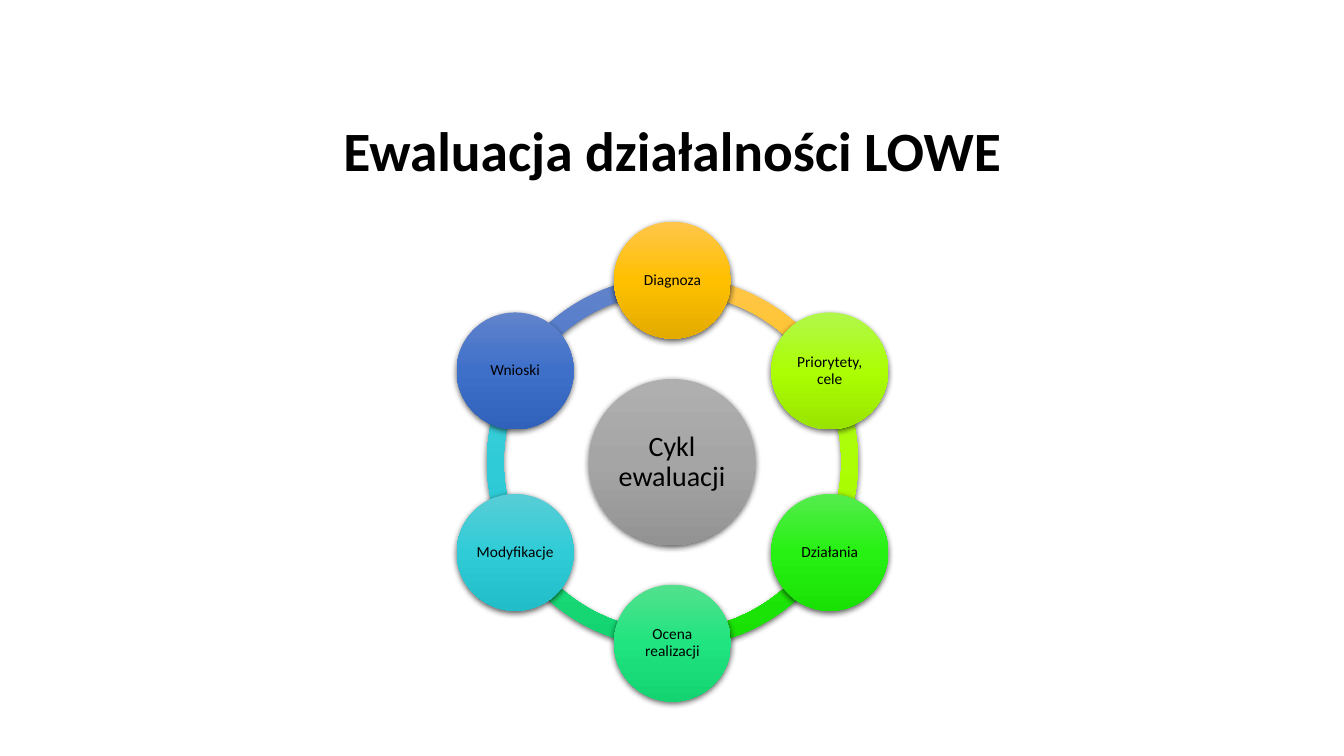
import math
from dataclasses import dataclass

from lxml import etree
from pptx import Presentation
from pptx import util as u
from pptx.dml.color import RGBColor
from pptx.enum import shapes, text
from pptx.oxml.ns import qn

PX = 9144  # EMU per px, 100 px to the inch


@dataclass(frozen=True)
class Theme:
    font: str = "Calibri"
    ink: str = "000000"
    title_size: float = 39.6
    hub_size: int = 20
    stage_size: int = 11
    grey: tuple = ("AFAFAF", "A5A5A5", "939393")
    gold: tuple = ("FFC64B", "FFC000", "E3AB00")
    lime: tuple = ("B1F74C", "ABFE03", "99E400")
    green: tuple = ("55EC4E", "26F112", "19E104")
    mint: tuple = ("53E18E", "20E47F", "13D471")
    teal: tuple = ("59CDD6", "2FCCD7", "21BDC8")
    blue: tuple = ("6183CB", "3E70CA", "3062BB")


THEME = Theme()

# Stages run clockwise from the top
STAGES = [
    ("Diagnoza", THEME.gold),
    ("Priorytety, cele", THEME.lime),
    ("Działania", THEME.green),
    ("Ocena realizacji", THEME.mint),
    ("Modyfikacje", THEME.teal),
    ("Wnioski", THEME.blue),
]
STEP = 360 // len(STAGES)
TOP = 270  # degrees, clockwise from the right
CENTRE = (667, 458)
ORBIT = 180
RING, HUB, STAGE = 368, 165, 116  # diameters


def write(frame, wording, size, bold=False, inset=2):
    """Centre one paragraph in a text frame."""
    frame.word_wrap = True
    frame.auto_size = text.MSO_AUTO_SIZE.NONE
    frame.vertical_anchor = text.MSO_ANCHOR.MIDDLE
    frame.margin_left = frame.margin_right = inset * PX
    frame.margin_top = frame.margin_bottom = inset * PX
    paragraph = frame.paragraphs[0]
    paragraph.alignment = text.PP_ALIGN.CENTER
    paragraph.line_spacing = 0.9
    run = paragraph.add_run()
    run.text = wording
    run.font.name = THEME.font
    run.font.size = u.Pt(size)
    run.font.bold = bold
    run.font.color.rgb = RGBColor.from_string(THEME.ink)


def shade(shape, colours):
    """Three-stop vertical gradient, no outline, soft shadow below."""
    shape.line.fill.background()
    shape.fill.gradient()
    shape.fill.gradient_angle = 270
    properties = shape._element.spPr
    stops = properties.find(".//" + qn("a:gsLst"))
    stops.clear()
    for position, colour in zip((0, 50000, 100000), colours):
        stop = etree.SubElement(stops, qn("a:gs"), pos=str(position))
        etree.SubElement(stop, qn("a:srgbClr"), val=colour)

    shape.shadow.inherit = False
    effects = properties.find(qn("a:effectLst"))
    shadow = etree.SubElement(
        effects, qn("a:outerShdw"), blurRad=str(u.Pt(4.5)), dist=str(u.Pt(1.5)),
        dir="5400000", algn="ctr", rotWithShape="0")
    black = etree.SubElement(shadow, qn("a:srgbClr"), val=THEME.ink)
    etree.SubElement(black, qn("a:alpha"), val="63000")


def add_round(cycle, kind, centre, diameter, colours):
    left, top = (round(c - diameter / 2) * PX for c in centre)
    shape = cycle.shapes.add_shape(kind, left, top, diameter * PX, diameter * PX)
    shade(shape, colours)
    return shape


def add_arc(cycle, start, colours):
    arc = add_round(cycle, shapes.MSO_SHAPE.BLOCK_ARC, CENTRE, RING, colours)
    # Angles are stored in 1/60000 degree and adjustments in 1/100000
    arc.adjustments[0] = start % 360 * 0.6
    arc.adjustments[1] = (start + STEP) % 360 * 0.6
    arc.adjustments[2] = 0.045


def add_disc(cycle, centre, diameter, colours, wording, **style):
    disc = add_round(cycle, shapes.MSO_SHAPE.OVAL, centre, diameter, colours)
    write(disc.text_frame, wording, **style)


def on_orbit(angle):
    turn = math.radians(angle)
    return CENTRE[0] + ORBIT * math.cos(turn), CENTRE[1] + ORBIT * math.sin(turn)


def main():
    deck = Presentation()
    deck.slide_width, deck.slide_height = 1333 * PX, 750 * PX
    slide = deck.slides.add_slide(deck.slide_layouts[5])

    # Title
    title = slide.shapes.title
    title.left, title.top = 92 * PX, 120 * PX
    title.width, title.height = 1150 * PX, 65 * PX
    write(title.text_frame, "Ewaluacja działalności LOWE", THEME.title_size, bold=True)

    # Ring, last stage at the back
    cycle = slide.shapes.add_group_shape()
    angles = [TOP + STEP * i for i in range(len(STAGES))]
    for angle, (_, colours) in reversed(list(zip(angles, STAGES))):
        add_arc(cycle, angle, colours)

    # Hub and stages
    add_disc(cycle, CENTRE, HUB, THEME.grey, "Cykl ewaluacji",
             size=THEME.hub_size, inset=3)
    for angle, (wording, colours) in zip(angles, STAGES):
        add_disc(cycle, on_orbit(angle), STAGE, colours, wording,
                 size=THEME.stage_size)

    deck.save("out.pptx")


if __name__ == "__main__":
    main()
